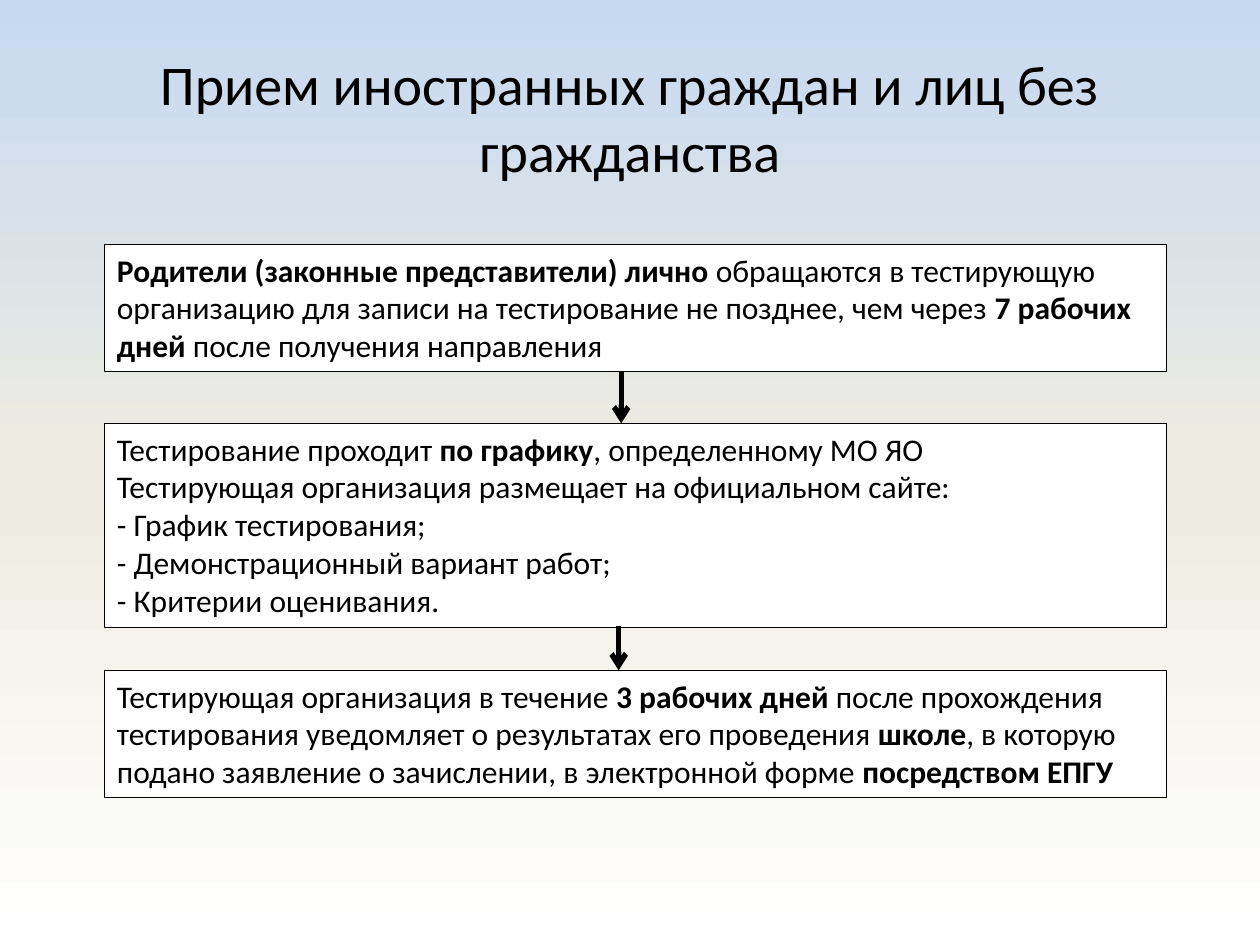
from copy import deepcopy
from dataclasses import dataclass

from lxml.etree import SubElement
from pptx import Presentation
from pptx.dml.color import RGBColor
from pptx.enum.shapes import MSO_CONNECTOR as Connector, MSO_SHAPE as Shape
from pptx.enum.text import MSO_ANCHOR as Anchor, MSO_AUTO_SIZE as AutoSize, PP_ALIGN as Align
from pptx.oxml.ns import qn
from pptx.slide import Slide
from pptx.text.text import _Paragraph as Paragraph
from pptx.util import Inches, Pt

BLACK = RGBColor(0x00, 0x00, 0x00)
WHITE = RGBColor(0xFF, 0xFF, 0xFF)
SKY = RGBColor(0xC6, 0xD9, 0xF1)
SAND = RGBColor(0xEE, 0xEC, 0xE1)

STEP_LEFT, STEP_WIDTH = 0.83, 8.43


@dataclass
class Step:
    """A box of the procedure; asterisks enclose bold words."""
    top: float
    height: float
    lines: list[str]


@dataclass
class Arrow:
    x: float
    top: float
    bottom: float


STEPS = [
    Step(1.94, 1.01, [
        "*Родители (законные представители) лично *обращаются в тестирующую "
        "организацию для записи на тестирование не позднее, чем через "
        "*7 рабочих дней *после получения направления"]),
    Step(3.36, 1.62, [
        "Тестирование проходит *по графику*, определенному МО ЯО",
        "Тестирующая организация размещает на официальном сайте:",
        "- График тестирования;",
        "- Демонстрационный вариант работ;",
        "- Критерии оценивания."]),
    Step(5.32, 1.01, [
        "Тестирующая организация в течение *3 рабочих дней *после прохождения "
        "тестирования уведомляет о результатах его проведения *школе*, в которую "
        "подано заявление о зачислении, в электронной форме *посредством ЕПГУ*"]),
]
ARROWS = [Arrow(4.93, 2.95, 3.36), Arrow(4.91, 4.97, 5.32)]


def paint_background(slide: Slide) -> None:
    fill = slide.background.fill
    fill.gradient()
    fill.gradient_angle = 270
    # The default gradient has two stops; a third goes between them
    stop_list = slide.element.xpath("./p:cSld/p:bg//a:gsLst")[0]
    stop_list.insert(1, deepcopy(stop_list[0]))
    for stop, position, color in zip(fill.gradient_stops, (0, 0.5, 1), (SKY, SAND, WHITE)):
        stop.position = position
        stop.color.rgb = color


def add_run(paragraph: Paragraph, text: str, size: int, bold: bool = False) -> None:
    run = paragraph.add_run()
    run.text = text
    run.font.color.rgb = BLACK
    for name, value in {"name": "Calibri", "size": Pt(size), "bold": bold}.items():
        setattr(run.font, name, value)


def write_title(slide: Slide, text: str) -> None:
    title = slide.shapes.title
    place = {"left": 0.5, "top": 0.3, "width": 9, "height": 1.25}
    for name, value in place.items():
        setattr(title, name, Inches(value))
    title.text_frame.vertical_anchor = Anchor.MIDDLE
    heading = title.text_frame.paragraphs[0]
    heading.alignment = Align.CENTER
    add_run(heading, text, 32)


def add_step(slide: Slide, step: Step) -> None:
    box = slide.shapes.add_shape(
        Shape.RECTANGLE, Inches(STEP_LEFT), Inches(step.top),
        Inches(STEP_WIDTH), Inches(step.height))
    box.shadow.inherit = False
    box.fill.solid()
    box.fill.fore_color.rgb = WHITE
    box.line.color.rgb = BLACK
    box.line.width = Pt(0.75)

    frame = box.text_frame
    layout = {"word_wrap": True, "auto_size": AutoSize.SHAPE_TO_FIT_TEXT,
              "vertical_anchor": Anchor.TOP}
    for name, value in layout.items():
        setattr(frame, name, value)
    for index, line in enumerate(step.lines):
        paragraph = frame.add_paragraph() if index else frame.paragraphs[0]
        paragraph.alignment = Align.LEFT
        for part, words in enumerate(line.split("*")):
            if words:
                add_run(paragraph, words, 18, bold=part % 2 == 1)


def add_arrow(slide: Slide, arrow: Arrow) -> None:
    link = slide.shapes.add_connector(
        Connector.STRAIGHT, Inches(arrow.x), Inches(arrow.top),
        Inches(arrow.x), Inches(arrow.bottom))
    link.line.color.rgb = BLACK
    link.line.width = Pt(3)
    # Arrowhead and no shadow
    properties = link.element.spPr
    SubElement(properties.find(qn("a:ln")), qn("a:tailEnd"), type="arrow")
    SubElement(properties, qn("a:effectLst"))


def main() -> None:
    deck = Presentation()
    deck.slide_width, deck.slide_height = Inches(10), Inches(7.5)
    slide = deck.slides.add_slide(deck.slide_layouts.get_by_name("Title Only"))

    paint_background(slide)
    write_title(slide, "Прием иностранных граждан и лиц без гражданства")
    for step in STEPS:
        add_step(slide, step)
    for arrow in ARROWS:
        add_arrow(slide, arrow)

    deck.save("out.pptx")


if __name__ == "__main__":
    main()
